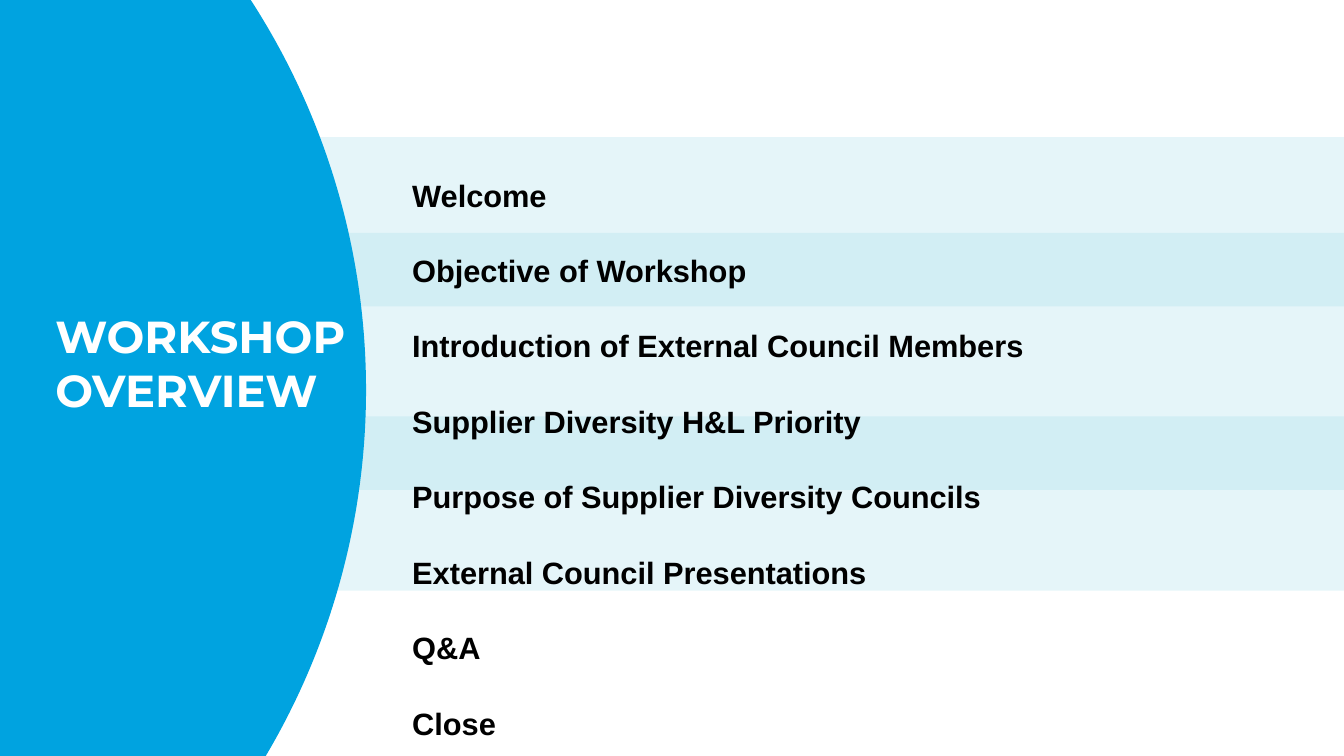
from lxml.etree import SubElement
from pptx import Presentation
from pptx.dml.color import RGBColor
from pptx.enum.shapes import MSO_SHAPE
from pptx.enum.text import MSO_ANCHOR, MSO_AUTO_SIZE, PP_ALIGN
from pptx.oxml.ns import qn
from pptx.util import Inches, Pt

TITLE = ["WORKSHOP", "OVERVIEW"]
AGENDA = [
    "Welcome",
    "Objective of Workshop",
    "Introduction of External Council Members",
    "Supplier Diversity H&L Priority",
    "Purpose of Supplier Diversity Councils",
    "External Council Presentations",
    "Q&A",
    "Close",
]
COLORS = {"band": "9ADBE8", "disc": "00A3E0", "title": "FFFFFF", "text": "000000"}
SLIDE_W, SLIDE_H = 13.33, 7.5
BANDS = [(-0.25, 1.36, 4.5), (2.95, 2.31, 0.73), (3.02, 4.13, 0.73)]  # left, top, height
DISC_LEFT, DISC_TOP, DISC_SIZE = -10.61, -3.25, 14.24


def add_filled(s, kind, left, top, width, height, color, opacity=None):
    sp = s.shapes.add_shape(kind, Inches(left), Inches(top), Inches(width), Inches(height))
    sp.shadow.inherit = False
    sp.line.fill.background()
    sp.fill.solid()
    sp.fill.fore_color.rgb = RGBColor.from_string(color)
    if opacity is not None:
        clr = sp.element.spPr.find(qn("a:solidFill"))[0]
        SubElement(clr, qn("a:alpha"), val=str(opacity * 1000))


def write_lines(sp, lines, font, size, color, gap=0, inset=None):
    tf = sp.text_frame
    tf.word_wrap = True
    tf.auto_size = MSO_AUTO_SIZE.NONE
    tf.vertical_anchor = MSO_ANCHOR.TOP
    if inset is not None:
        tf.margin_left = tf.margin_right = tf.margin_top = tf.margin_bottom = Inches(inset)
    for i, line in enumerate(lines):
        p = tf.paragraphs[0] if i == 0 else tf.add_paragraph()
        p.alignment = PP_ALIGN.LEFT
        p.space_before = Pt(gap if i else 0)
        r = p.add_run()
        r.text = line
        r.font.name, r.font.size, r.font.bold = font, Pt(size), True
        r.font.color.rgb = RGBColor.from_string(color)


prs = Presentation()
prs.slide_width, prs.slide_height = Inches(SLIDE_W), Inches(SLIDE_H)
s = prs.slides.add_slide(prs.slide_layouts[5])

# Translucent bands running to the right edge
for left, top, height in BANDS:
    add_filled(s, MSO_SHAPE.RECTANGLE, left, top, SLIDE_W - left, height,
               COLORS["band"], opacity=25)

# Large disc on the left
add_filled(s, MSO_SHAPE.OVAL, DISC_LEFT, DISC_TOP, DISC_SIZE, DISC_SIZE, COLORS["disc"])

# Agenda
agenda = s.shapes.add_textbox(Inches(3.99), Inches(1.7), Inches(9.06), Inches(5.65))
write_lines(agenda, AGENDA, "Arial", 22, COLORS["text"], gap=27.5)

# Title, brought in front of the disc
title = s.shapes.title
title.left, title.top, title.width, title.height = (
    Inches(0.5), Inches(3.01), Inches(3.14), Inches(0.91))
write_lines(title, TITLE, "Montserrat", 32, COLORS["title"], inset=0.05)
title.element.getparent().append(title.element)

prs.save("out.pptx")
